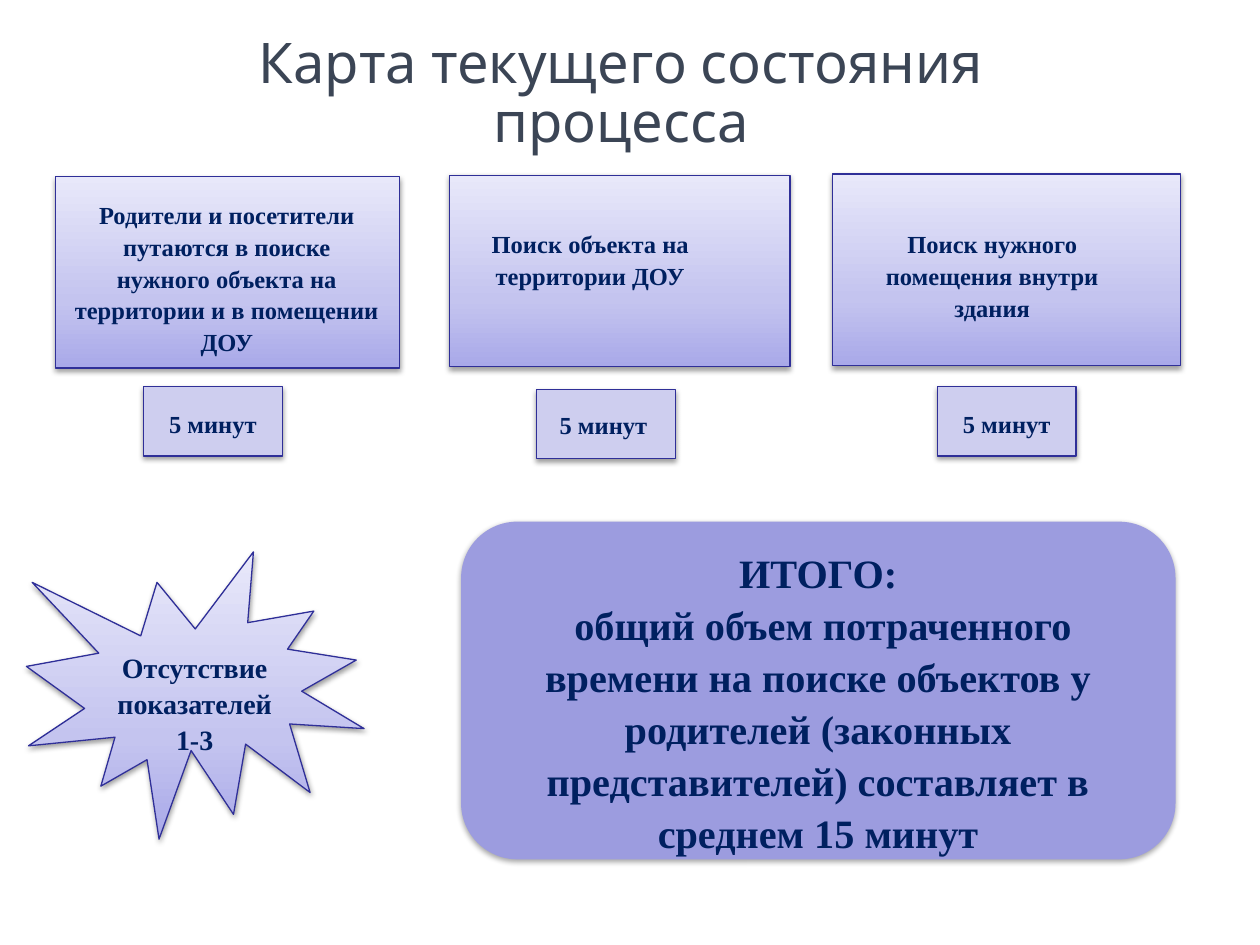
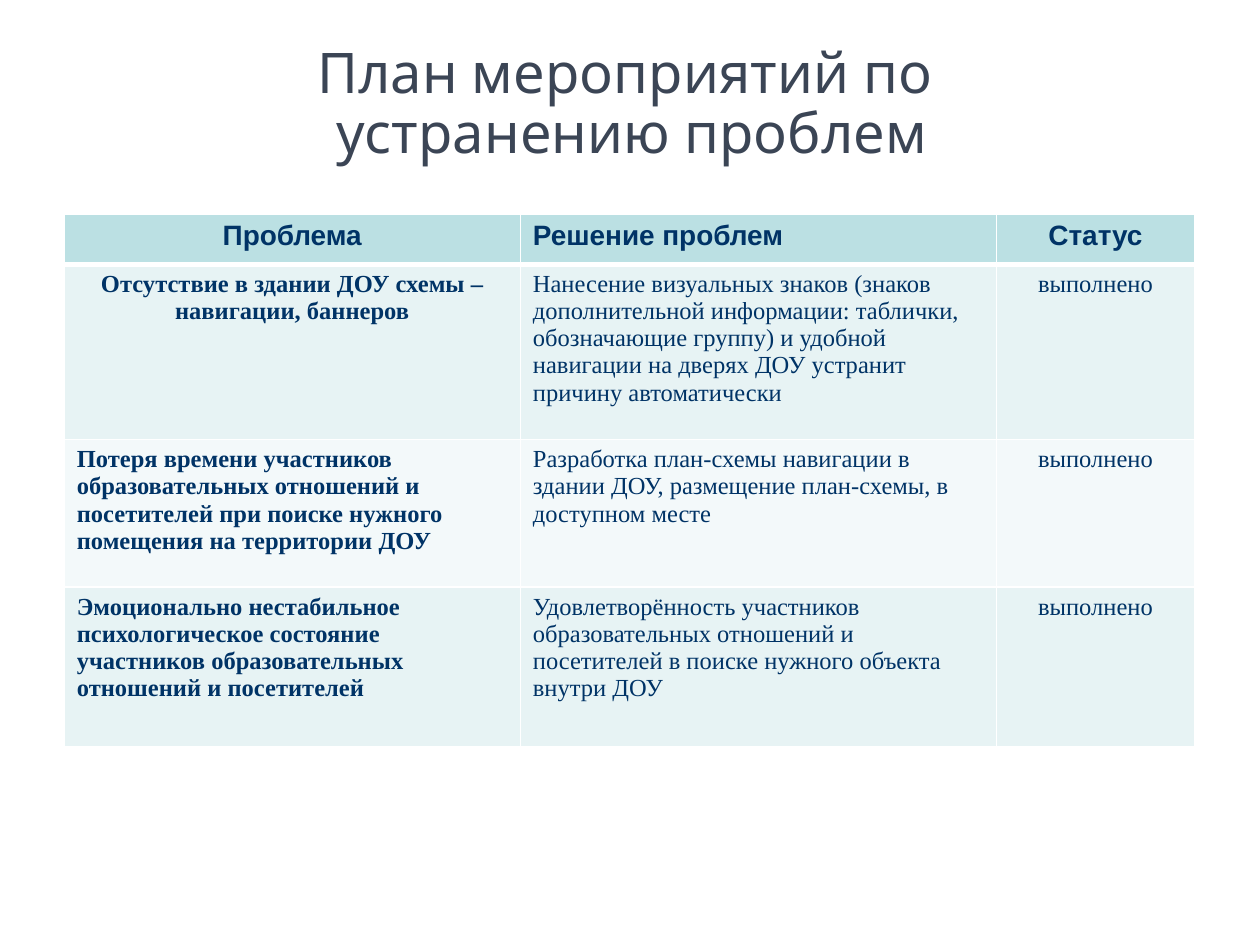
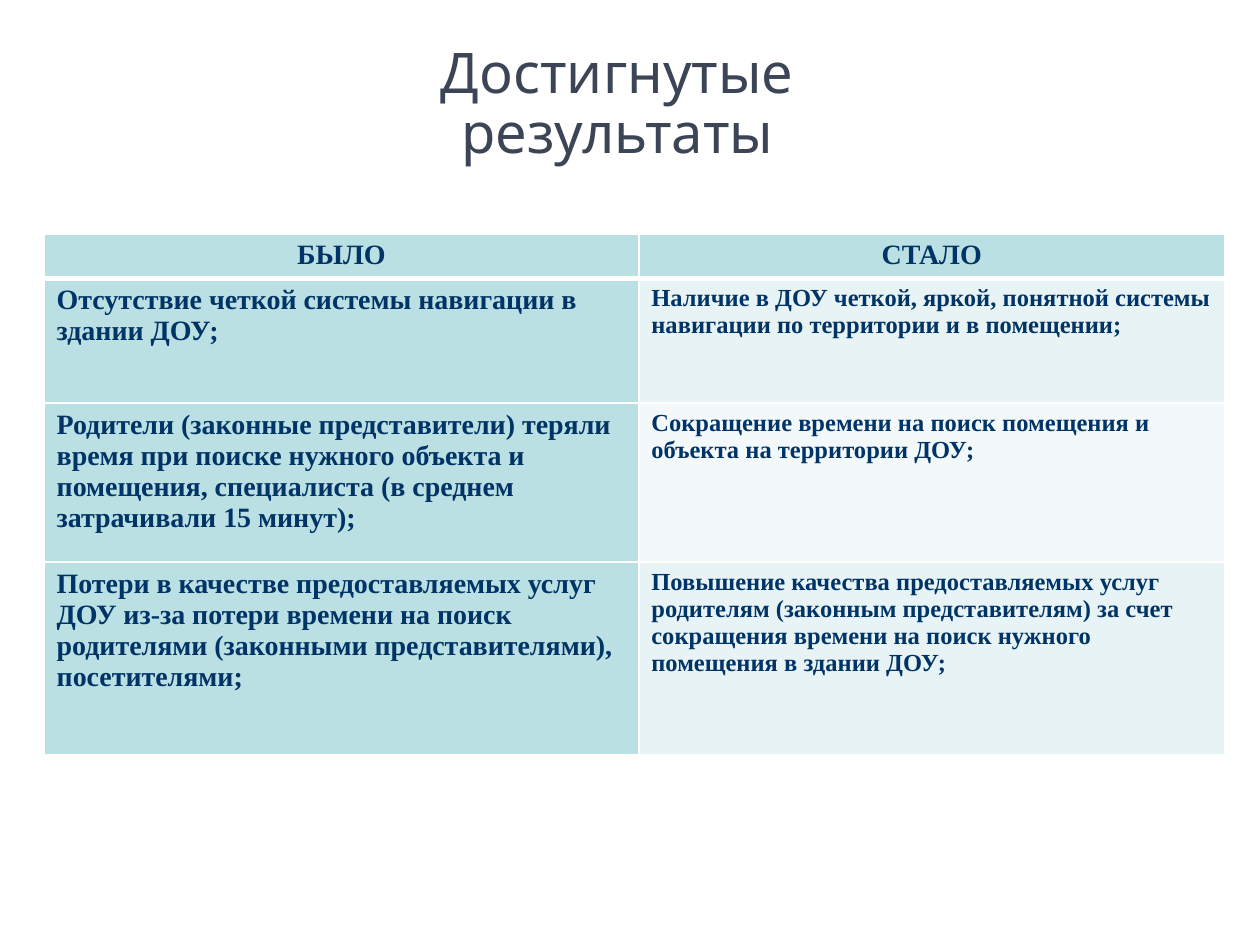
import copy
from dataclasses import dataclass

import lxml.etree
import pptx
import pptx.dml.color
import pptx.enum.shapes
import pptx.enum.text
import pptx.oxml.ns
import pptx.util

Inches = pptx.util.Inches
Pt = pptx.util.Pt
Shape = pptx.enum.shapes.MSO_SHAPE
Align = pptx.enum.text.PP_ALIGN
qn = pptx.oxml.ns.qn


@dataclass(frozen=True)
class Theme:
    head_font: str = "League Spartan"
    body_font: str = "Times New Roman"
    cell_font: str = "Arial"
    head: str = "3B4555"
    ink: str = "002060"
    cell_ink: str = "003366"
    edge: str = "2F2F98"
    tag: str = "CECEEF"
    total: str = "9C9CDF"
    fade: tuple = ((0, "A9A9E9"), (0.35, "C4C4EF"), (1, "E8E8FA"))
    band: str = "BBE0E3"
    rows: tuple = ("E7F3F4", "F3F9FA")
    grid: str = "FFFFFF"
    head_size: int = 32
    total_size: int = 23
    large: int = 16
    small: int = 14


THEME = Theme()


def rgb(code):
    return pptx.dml.color.RGBColor.from_string(code)


def style(frame, size, font, color, bold=False, align=Align.CENTER, space=None):
    for para in frame.paragraphs:
        para.alignment = align
        para.line_spacing = space
        for run in para.runs:
            run.font.size = Pt(size)
            run.font.name = font
            run.font.bold = bold
            run.font.color.rgb = rgb(color)


def add_box(slide, place, text):
    frame = slide.shapes.add_textbox(*map(Inches, place)).text_frame
    frame.word_wrap = True
    frame.text = text
    return frame


def add_title(slide, place, text):
    frame = add_box(slide, place, "")
    frame.paragraphs[0].text = text
    frame.margin_top = Inches(0.08)
    style(frame, THEME.head_size, THEME.head_font, THEME.head, space=0.88)


def add_label(slide, place, text, size=THEME.small):
    frame = add_box(slide, place, text)
    style(frame, size, THEME.body_font, THEME.ink, True, space=1.08)


def add_shadow(shape, alpha):
    shape.shadow.inherit = False
    effects = shape._element.spPr.find(qn("a:effectLst"))
    outer = lxml.etree.SubElement(
        effects, qn("a:outerShdw"), blurRad=str(Pt(3.1)), dist=str(Pt(1.6)),
        dir="5400000", rotWithShape="0")
    color = lxml.etree.SubElement(outer, qn("a:srgbClr"), val="000000")
    lxml.etree.SubElement(color, qn("a:alpha"), val=str(alpha * 1000))


def set_fade(shape):
    """Fill with the three-stop gradient, darkest at the bottom."""
    shape.fill.gradient()
    shape.fill.gradient_angle = 90
    stops = shape._element.spPr.find(qn("a:gradFill")).find(qn("a:gsLst"))
    stops.insert(1, copy.deepcopy(stops[0]))
    for stop, (pos, color) in zip(shape.fill.gradient_stops, THEME.fade):
        stop.position = pos
        stop.color.rgb = rgb(color)


def add_panel(slide, kind, place, fill=None, edge=True, alpha=38):
    """Add a shaded shape; without a fill colour it gets the gradient."""
    shape = slide.shapes.add_shape(kind, *map(Inches, place))
    if fill:
        shape.fill.solid()
        shape.fill.fore_color.rgb = rgb(fill)
    else:
        set_fade(shape)
    if edge:
        shape.line.color.rgb = rgb(THEME.edge)
        shape.line.width = Pt(0.75)
    else:
        shape.line.fill.background()
    add_shadow(shape, alpha)


def set_grid(cell, base):
    props = cell._tc.get_or_add_tcPr()
    for side, width in (("L", 1), ("R", 1), ("T", 1), ("B", base)):
        line = lxml.etree.SubElement(props, qn(f"a:ln{side}"), w=str(Pt(width)))
        fill = lxml.etree.SubElement(line, qn("a:solidFill"))
        lxml.etree.SubElement(fill, qn("a:srgbClr"), val=THEME.grid)


def add_table(slide, left, top, widths, heights, texts):
    """Add a grid with a header band and striped rows, text not yet styled."""
    frame = slide.shapes.add_table(
        len(heights), len(widths), Inches(left), Inches(top),
        Inches(sum(widths)), Inches(sum(heights)))
    table = frame.table
    for col, width in zip(table.columns, widths):
        col.width = Inches(width)
    for num, (row, height) in enumerate(zip(table.rows, heights)):
        row.height = Inches(height)
        for cell, text in zip(row.cells, texts[num]):
            cell.text_frame.text = text
            set_grid(cell, 1 if num else 3)
            cell.fill.solid()
            color = THEME.rows[(num - 1) % 2] if num else THEME.band
            cell.fill.fore_color.rgb = rgb(color)
    return table


def style_cell(cell, size, font=THEME.body_font, bold=True, align=Align.LEFT,
               space=None):
    style(cell.text_frame, size, font, THEME.cell_ink, bold, align, space)


def draw_map(slide):
    add_title(slide, (1.06, 0.21, 7.74, 0.64), "Карта текущего состояния процесса")
    steps = (
        ((0.44, 1.4, 2.73, 1.52), (0.49, 1.52, 2.62, 1.28),
         "Родители и посетители путаются в поиске нужного объекта на "
         "территории и в помещении ДОУ"),
        ((3.57, 1.39, 2.7, 1.52), (3.58, 1.75, 2.21, 0.57),
         "Поиск объекта на территории ДОУ"),
        ((6.61, 1.38, 2.76, 1.52), (6.77, 1.75, 2.21, 0.81),
         "Поиск нужного помещения внутри здания"),
    )
    for card, label, text in steps:
        add_panel(slide, Shape.RECTANGLE, card)
        add_label(slide, label, text)
    times = ((1.14, 3.07, 1.14, 3.18), (4.26, 3.09, 4.24, 3.19),
             (7.44, 3.07, 7.44, 3.18))
    for left, top, text_left, text_top in times:
        add_panel(slide, Shape.RECTANGLE, (left, top, 1.1, 0.55), THEME.tag)
        add_label(slide, (text_left, text_top, 1.1, 0.34), "5 минут")

    add_panel(slide, Shape.EXPLOSION1, (0.21, 4.38, 2.68, 2.28))
    add_label(slide, (0.64, 5.09, 1.81, 0.91), "Отсутствие показателей\n1-3",
              THEME.large)
    add_panel(slide, Shape.ROUNDED_RECTANGLE, (3.66, 4.14, 5.67, 2.68),
              THEME.total, edge=False, alpha=35)
    add_label(slide, (3.78, 4.27, 5.43, 2.42),
              "ИТОГО:\n общий объем потраченного времени на поиске объектов у "
              "родителей (законных представителей) составляет в среднем 15 минут",
              THEME.total_size)


def draw_plan(slide):
    add_title(slide, (1.85, 0.29, 6.22, 1.1),
              "План мероприятий по\v устранению проблем")
    texts = (
        ("Проблема", "Решение проблем", "Статус"),
        ("Отсутствие в здании ДОУ схемы – навигации, баннеров",
         "Нанесение визуальных знаков (знаков дополнительной информации: "
         "таблички, обозначающие группу) и удобной навигации на дверях ДОУ "
         "устранит причину автоматически",
         "выполнено"),
        ("Потеря времени участников образовательных отношений и посетителей "
         "при поиске нужного помещения на территории ДОУ",
         "Разработка план-схемы навигации в здании ДОУ, размещение "
         "план-схемы, в доступном месте",
         "выполнено"),
        ("Эмоционально нестабильное психологическое состояние участников "
         "образовательных отношений и посетителей",
         "Удовлетворённость участников образовательных отношений и "
         "посетителей в поиске нужного объекта внутри ДОУ",
         "выполнено"),
    )
    table = add_table(slide, 0.51, 1.7, (3.62, 3.78, 1.57),
                      (0.4, 1.39, 1.17, 1.27), texts)
    for num, row in enumerate(table.rows):
        for col, cell in enumerate(row.cells):
            mid = col == 2 or (col == 0 and num < 2)
            align = Align.CENTER if mid else Align.LEFT
            if num == 0:
                style_cell(cell, THEME.large, THEME.cell_font, align=align)
            else:
                style_cell(cell, THEME.small, bold=col == 0, align=align)


def draw_gains(slide):
    add_title(slide, (2.25, 0.29, 5.3, 0.64), "Достигнутые результаты")
    texts = (
        ("БЫЛО", "СТАЛО"),
        ("Отсутствие четкой системы навигации в здании ДОУ;",
         "Наличие в ДОУ четкой, яркой, понятной системы навигации по "
         "территории и в помещении;"),
        ("Родители (законные представители) теряли время при поиске нужного "
         "объекта и помещения, специалиста (в среднем затрачивали 15 минут);",
         "Сокращение времени на поиск помещения и объекта на территории ДОУ;"),
        ("Потери в качестве предоставляемых услуг ДОУ из-за потери времени на "
         "поиск родителями (законными представителями), посетителями;",
         "Повышение качества предоставляемых услуг родителям (законным "
         "представителям) за счет сокращения времени на поиск нужного "
         "помещения в здании ДОУ;"),
    )
    table = add_table(slide, 0.35, 1.86, (4.72, 4.65),
                      (0.35, 0.99, 1.26, 1.53), texts)
    for num, row in enumerate(table.rows):
        for col, cell in enumerate(row.cells):
            if num == 0:
                cell.margin_left = cell.margin_right = Inches(0.07)
                cell.margin_top = cell.margin_bottom = 0
                style_cell(cell, THEME.large, align=Align.CENTER, space=1.15)
            elif col == 0:
                cell.fill.fore_color.rgb = rgb(THEME.band)
                style_cell(cell, THEME.large)
            else:
                style_cell(cell, THEME.small)


def main():
    deck = pptx.Presentation()
    deck.slide_width = Inches(10)
    deck.slide_height = Inches(7.5)
    for draw in (draw_map, draw_plan, draw_gains):
        draw(deck.slides.add_slide(deck.slide_layouts[6]))
    deck.save("out.pptx")


if __name__ == "__main__":
    main()
